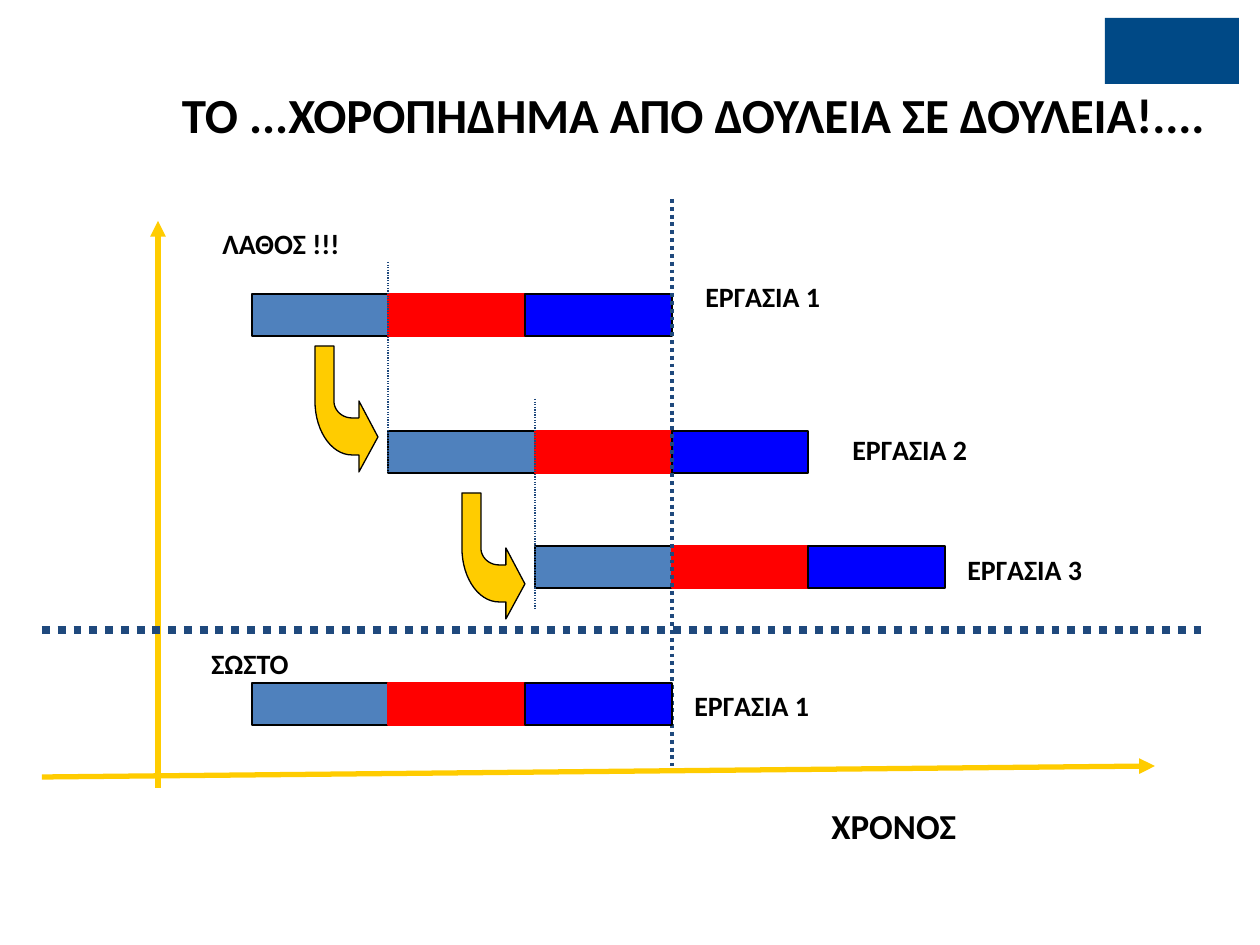
from dataclasses import dataclass
from math import cos, radians, sin

from lxml.etree import SubElement
from pptx import Presentation
from pptx.dml.color import RGBColor as RGB
from pptx.enum.shapes import MSO_CONNECTOR as CONNECTOR, MSO_SHAPE as SHAPE
from pptx.enum.text import MSO_ANCHOR as ANCHOR, MSO_AUTO_SIZE as AUTO_SIZE, PP_ALIGN as ALIGN
from pptx.oxml.ns import qn
from pptx.util import Inches, Pt

PX = 7257


@dataclass(frozen=True)
class Theme:
    font: str = "Calibri"
    black: RGB = RGB(0x00, 0x00, 0x00)
    gold: RGB = RGB(0xFF, 0xCC, 0x00)
    steel: RGB = RGB(0x4F, 0x81, 0xBD)
    red: RGB = RGB(0xFF, 0x00, 0x00)
    blue: RGB = RGB(0x00, 0x00, 0xFF)
    navy: RGB = RGB(0x1F, 0x49, 0x7D)
    emblem: RGB = RGB(0x00, 0x49, 0x86)
    title_size: int = 28
    axis_size: int = 20
    label_size: int = 16
    outline: float = 0.75


theme = Theme()
prs = Presentation()
prs.slide_width, prs.slide_height = Inches(10), Inches(7.5)
slide = prs.slides.add_slide(prs.slide_layouts[5])
shapes = slide.shapes


def add_line(x1, y1, x2, y2, color, width, detail, value):
    line = shapes.add_connector(CONNECTOR.STRAIGHT, x1 * PX, y1 * PX, x2 * PX, y2 * PX)
    line.line.color.rgb = color
    line.line.width = Pt(width)
    properties = line._element.spPr
    SubElement(properties.find(qn("a:ln")), qn(detail)).set(
        "val" if detail == "a:prstDash" else "type", value)
    SubElement(properties, qn("a:effectLst"))


def add_task(top, edges):
    segments = [(theme.steel, theme.black), (theme.red, theme.red), (theme.blue, theme.black)]
    for left, right, (fill, outline) in zip(edges, edges[1:], segments):
        segment = shapes.add_shape(SHAPE.RECTANGLE, left * PX, top * PX, (right - left) * PX, 42 * PX)
        segment.shadow.inherit = False
        segment.fill.solid()
        segment.fill.fore_color.rgb = fill
        segment.line.color.rgb = outline
        segment.line.width = Pt(theme.outline)


emblem = shapes.add_shape(SHAPE.RECTANGLE, 1105 * PX, 18 * PX, 134 * PX, 66 * PX)
emblem.shadow.inherit = False
emblem.fill.solid()
emblem.fill.fore_color.rgb = theme.emblem
emblem.line.fill.background()

title = shapes.title
title.left, title.top, title.width, title.height = 0, 78 * PX, 1260 * PX, 131 * PX
title.text = "ΤΟ ...ΧΟΡΟΠΗΔΗΜΑ ΑΠΟ ΔΟΥΛΕΙΑ ΣΕ ΔΟΥΛΕΙΑ!...."
title.text_frame.auto_size = AUTO_SIZE.NONE
title.text_frame.vertical_anchor = ANCHOR.TOP
title.text_frame.margin_left = 139 * PX
heading = title.text_frame.paragraphs[0]
heading.alignment = ALIGN.CENTER
heading.font.name = theme.font
heading.font.size = Pt(theme.title_size)
heading.font.bold = True
heading.font.color.rgb = theme.black

for axis in [(158, 788, 158, 221), (42, 777, 1155, 766)]:
    add_line(*axis, theme.gold, 3, "a:tailEnd", "triangle")

first_task = (252, 388, 525, 672)
add_task(294, first_task)
add_task(431, (388, 535, 672, 808))
add_task(546, (535, 672, 808, 945))
add_line(672, 199, 672, 766, theme.navy, 2.25, "a:prstDash", "sysDot")
add_task(683, first_task)

for *ends, width in [(42, 630, 1207, 630, 4.5), (388, 262, 388, 472, 0.75), (535, 399, 535, 609, 0.75)]:
    add_line(*ends, theme.navy, width, "a:prstDash", "sysDot")

labels = [
    ("ΧΡΟΝΟΣ", 819, 798, 179, 54, theme.axis_size),
    ("ΕΡΓΑΣΙΑ 1", 693, 273, 472, 47, theme.label_size),
    ("ΕΡΓΑΣΙΑ 2", 840, 426, 472, 47, theme.label_size),
    ("ΕΡΓΑΣΙΑ 3", 955, 546, 472, 47, theme.label_size),
    ("ΕΡΓΑΣΙΑ 1", 682, 682, 472, 47, theme.label_size),
    ("ΣΩΣΤΟ", 199, 640, 305, 47, theme.label_size),
    ("ΛΑΘΟΣ !!!", 210, 220, 305, 47, theme.label_size),
]
for text, left, top, width, height, size in labels:
    label = shapes.add_textbox(left * PX, top * PX, width * PX, height * PX).text_frame
    label.word_wrap = True
    label.text = text
    wording = label.paragraphs[0]
    wording.font.name = theme.font
    wording.font.size = Pt(size)
    wording.font.bold = True
    wording.font.color.rgb = theme.black

bend = [radians(angle) for angle in range(90, 181, 6)]
outer = [(37 + 37 * cos(a), 55 + 54 * sin(a)) for a in bend]
inner = [(37 + 18 * cos(a), 55 + 17 * sin(a)) for a in reversed(bend)]
jump_outline = [(44, 126), (44, 109), *outer, (0, 0), (19, 0), *inner, (44, 72), (44, 55)]
for left, top in [(315, 346), (462, 493)]:
    builder = shapes.build_freeform(63 * PX, 91 * PX)
    builder.add_line_segments([(x * PX, y * PX) for x, y in jump_outline], close=True)
    jump = builder.convert_to_shape(left * PX, top * PX)
    jump.shadow.inherit = False
    jump.fill.solid()
    jump.fill.fore_color.rgb = theme.gold
    jump.line.color.rgb = theme.black
    jump.line.width = Pt(theme.outline)

prs.save("out.pptx")
